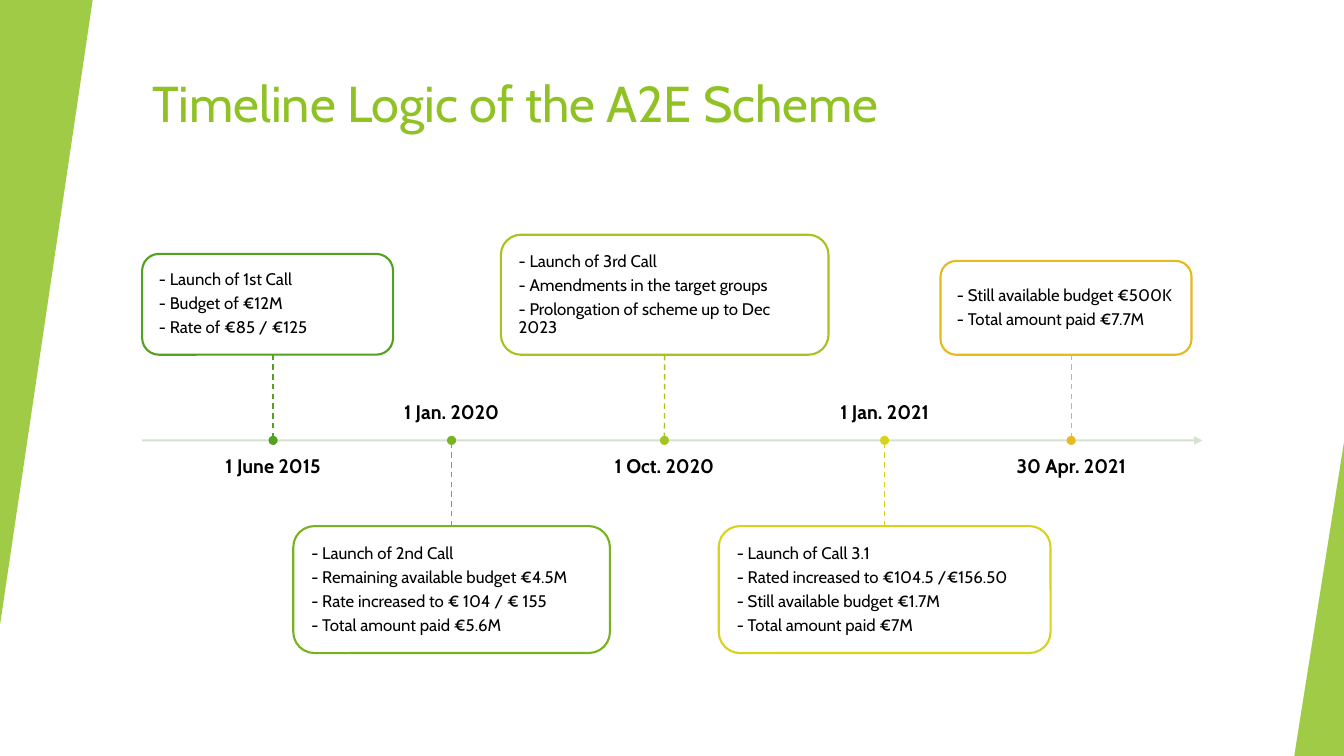
from dataclasses import dataclass

from pptx import Presentation
from pptx.dml.color import RGBColor
from pptx.enum import dml, shapes, text
from pptx.oxml.ns import qn
from pptx.util import Pt

FONT = "Cabin"
WHITE = RGBColor(0xFF, 0xFF, 0xFF)
BLACK = RGBColor(0x00, 0x00, 0x00)
LIME = RGBColor(0x90, 0xC2, 0x26)
AXIS_GREY = RGBColor(0xD1, 0xDF, 0xCD)
GREEN = RGBColor(0x54, 0xA0, 0x21)
LEAF = RGBColor(0x79, 0xB2, 0x20)
OLIVE = RGBColor(0xA5, 0xC4, 0x1F)
YELLOW = RGBColor(0xD7, 0xD3, 0x1D)
AMBER = RGBColor(0xE6, 0xB9, 0x1E)

AXIS_Y = 314.6
STEM = 61.2       # axis to box
DOT = 5
DATE_W, DATE_H, DATE_GAP = 164, 36.7, 11.6


@dataclass
class Milestone:
    x: float
    date: str
    above: bool
    left: float
    width: float
    height: float
    color: RGBColor
    notes: list[str]


MILESTONES = [
    Milestone(195.1, "1 June 2015", True, 101.5, 179.3, 72, GREEN,
              ["- Launch of 1st Call", "- Budget of €12M", "- Rate of €85 / €125"]),
    Milestone(322.6, "1 Jan. 2020", False, 209.5, 226.2, 90.7, LEAF,
              ["- Launch of 2nd Call", "- Remaining available budget €4.5M",
               "- Rate increased to € 104 / € 155", "- Total amount paid €5.6M"]),
    Milestone(474.6, "1 Oct. 2020", True, 357.8, 234, 85.7, OLIVE,
              ["- Launch of 3rd Call", "- Amendments in the target groups",
               "- Prolongation of scheme up to Dec 2023"]),
    Milestone(631.9, "1 Jan. 2021", False, 513.4, 237, 90.7, YELLOW,
              ["- Launch of Call 3.1", "- Rated increased to €104.5 /€156.50",
               "- Still available budget €1.7M", "- Total amount paid €7M"]),
    Milestone(765.2, "30 Apr. 2021", True, 671.8, 179.3, 67, AMBER,
              ["- Still available budget €500K", "- Total amount paid €7.7M"]),
]


def set_alpha(parent, percent: int) -> None:
    """Make the solid fill inside a shape or line element translucent."""
    color = parent.find(qn("a:solidFill"))[0]
    alpha = color.makeelement(qn("a:alpha"), {"val": str(percent * 1000)})
    color.append(alpha)


def write(tf, lines: list[str], *, size: float, color=BLACK, bold=False,
          align=text.PP_ALIGN.LEFT, anchor=text.MSO_ANCHOR.TOP,
          margins=(0, 0), spacing=0.9, after=0) -> None:
    tf.word_wrap = True
    tf.auto_size = text.MSO_AUTO_SIZE.NONE
    tf.vertical_anchor = anchor
    tf.margin_left = tf.margin_right = Pt(margins[0])
    tf.margin_top = tf.margin_bottom = Pt(margins[1])
    for i, line in enumerate(lines):
        p = tf.paragraphs[0] if i == 0 else tf.add_paragraph()
        p.alignment = align
        p.line_spacing = spacing
        p.space_after = Pt(after)
        r = p.add_run()
        r.text = line
        r.font.name = FONT
        r.font.size = Pt(size)
        r.font.bold = bold
        r.font.color.rgb = color


def add_shape(s, kind, x: float, y: float, w: float, h: float, *, fill, alpha=100, line=None):
    sp = s.shapes.add_shape(kind, Pt(x), Pt(y), Pt(w), Pt(h))
    sp.shadow.inherit = False
    sp.fill.solid()
    sp.fill.fore_color.rgb = fill
    if alpha < 100:
        set_alpha(sp._element.spPr, alpha)
    if line is None:
        sp.line.fill.background()
    else:
        sp.line.color.rgb = line
        sp.line.width = Pt(1.5)
    return sp


def add_line(s, x1: float, y1: float, x2: float, y2: float, *, color, width):
    c = s.shapes.add_connector(shapes.MSO_CONNECTOR.STRAIGHT, Pt(x1), Pt(y1), Pt(x2), Pt(y2))
    c.line.color.rgb = color
    c.line.width = Pt(width)
    spPr = c._element.spPr
    spPr.append(spPr.makeelement(qn("a:effectLst"), {}))
    return c


def add_wedge(s, x: float, y: float, w: float, h: float, rotation=0) -> None:
    sp = add_shape(s, shapes.MSO_SHAPE.ISOSCELES_TRIANGLE, x, y, w, h, fill=LIME, alpha=85)
    sp.adjustments[0] = 1
    sp.rotation = rotation


def add_axis(s) -> None:
    ln = add_line(s, 101.5, AXIS_Y, 859, AXIS_Y, color=AXIS_GREY, width=1.5).line._get_or_add_ln()
    set_alpha(ln, 90)
    ln.append(ln.makeelement(qn("a:tailEnd"), {"type": "triangle"}))


def add_milestone(s, m: Milestone) -> None:
    # Box with notes
    edge = AXIS_Y - STEM if m.above else AXIS_Y + STEM
    top = edge - m.height if m.above else edge
    box = add_shape(s, shapes.MSO_SHAPE.ROUNDED_RECTANGLE, m.left, top, m.width, m.height,
                    fill=WHITE, alpha=90, line=m.color)
    write(box.text_frame, m.notes, size=12, anchor=text.MSO_ANCHOR.MIDDLE,
          margins=(8.5, 8.5), after=4.2)

    # Dashed stem, joined to the box where it meets the middle of the side
    stem = add_line(s, m.x, edge, m.x, AXIS_Y, color=m.color, width=1)
    stem.line.dash_style = dml.MSO_LINE.DASH
    if abs(m.left + m.width / 2 - m.x) < 1:
        stem.begin_connect(box, 2 if m.above else 0)

    # Dot on the axis
    add_shape(s, shapes.MSO_SHAPE.OVAL, m.x - DOT / 2, AXIS_Y - DOT / 2, DOT, DOT,
              fill=m.color, line=m.color)

    # Date on the other side of the axis
    date_y = AXIS_Y + DATE_GAP if m.above else AXIS_Y - DATE_GAP - DATE_H
    tb = s.shapes.add_textbox(Pt(m.x - DATE_W / 2), Pt(date_y), Pt(DATE_W), Pt(DATE_H))
    write(tb.text_frame, [m.date], size=14, bold=True, align=text.PP_ALIGN.CENTER,
          anchor=text.MSO_ANCHOR.TOP if m.above else text.MSO_ANCHOR.BOTTOM, after=4.9)


def main() -> None:
    prs = Presentation()
    prs.slide_width, prs.slide_height = Pt(960), Pt(540)
    s = prs.slides.add_slide(prs.slide_layouts[5])

    # Title
    title = s.shapes.title
    title.left, title.top, title.width, title.height = Pt(101.5), Pt(48.2), Pt(802.8), Pt(86.4)
    write(title.text_frame, ["Timeline Logic of the A2E Scheme"], size=36, color=LIME,
          margins=(7.2, 3.6), spacing=1.0)

    # Side wedges
    add_wedge(s, 0, 0, 66.2, 446.4, rotation=180)
    add_wedge(s, 924.5, 316, 35.5, 224)

    # Timeline
    add_axis(s)
    for m in MILESTONES:
        add_milestone(s, m)

    prs.save("out.pptx")


if __name__ == "__main__":
    main()
